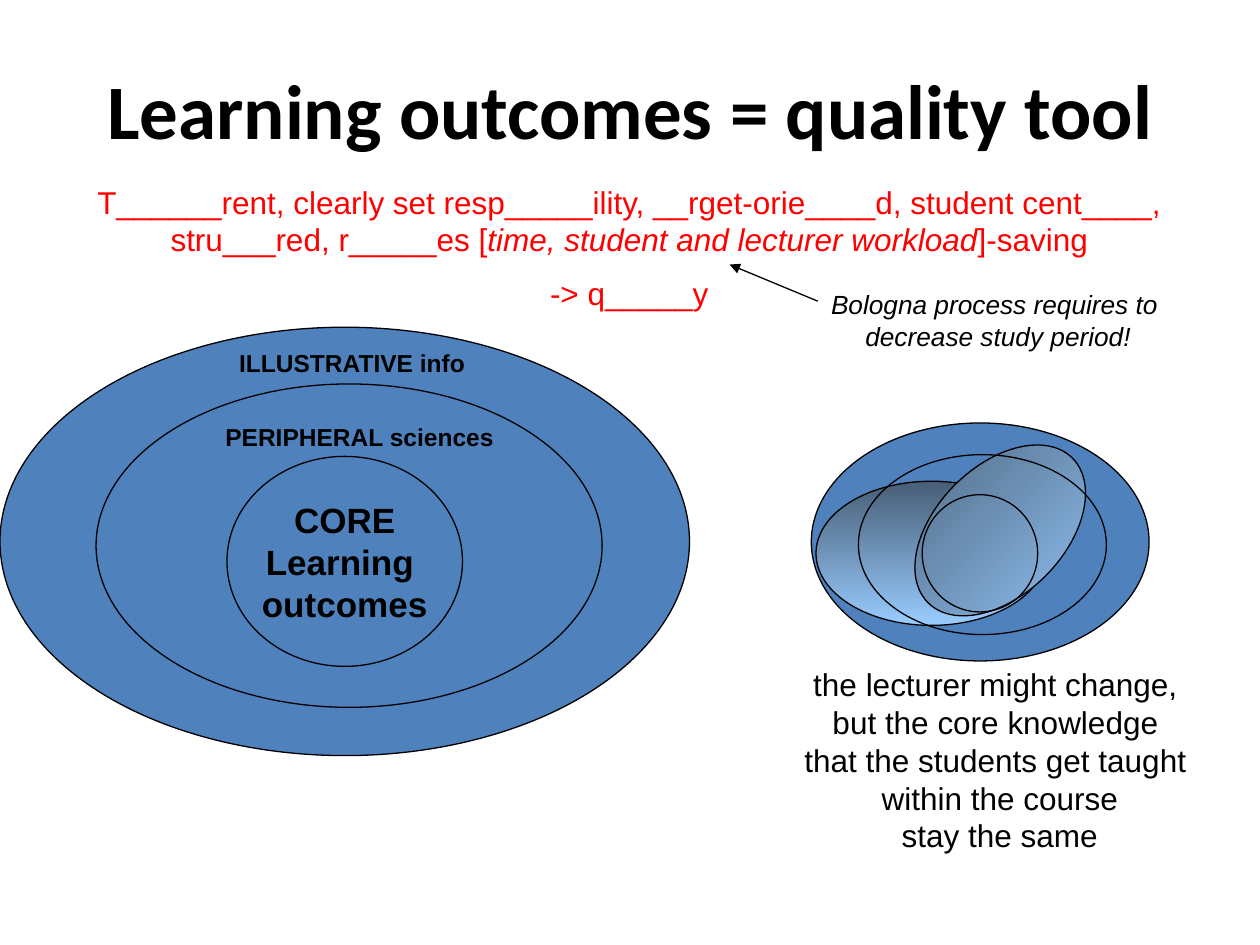
import pptx
import pptx.util
import pptx.dml.color
import pptx.enum.shapes
import pptx.enum.text
import pptx.oxml.ns
from lxml import etree

Pt = pptx.util.Pt
Rgb = pptx.dml.color.RGBColor.from_string
Align = pptx.enum.text.PP_ALIGN
Anchor = pptx.enum.text.MSO_ANCHOR
Kind = pptx.enum.shapes
qn = pptx.oxml.ns.qn

hues = {"ink": "000000", "red": "FF0000", "blue": "4F81BD",
        "dusk": "475E76", "sky": "99CCFF"}


def write(shape, lines, form, hue="ink", align=Align.CENTER, wrap=True, gap=0):
    frame = shape.text_frame
    frame.word_wrap = wrap
    for row, line in enumerate(lines):
        para = frame.paragraphs[0] if row == 0 else frame.add_paragraph()
        para.alignment = align
        if row and gap:
            para.space_before = Pt(gap)
        for part, text in enumerate(line.split("|")):
            run = para.add_run()
            run.text = text
            for key, value in form.items():
                setattr(run.font, key, value)
            if part % 2:
                run.font.italic = True
            run.font.color.rgb = Rgb(hues[hue])


def oval(group, place, fill=None, turn=0):
    shape = group.shapes.add_shape(Kind.MSO_SHAPE.OVAL, *map(Pt, place))
    shape.shadow.inherit = False
    shape.rotation = turn
    shape.line.color.rgb = Rgb(hues["ink"])
    shape.line.width = Pt(0.75)
    if fill == "fade":
        shape.fill.gradient()
        shape.fill.gradient_angle = 270
        for stop, hue, spot in zip(shape.fill.gradient_stops, ("dusk", "sky"), (0, 1)):
            stop.color.rgb = Rgb(hues[hue])
            stop.position = spot
    elif fill:
        shape.fill.solid()
        shape.fill.fore_color.rgb = Rgb(hues[fill])
    else:
        shape.fill.background()
    return shape


deck = pptx.Presentation()
deck.slide_width, deck.slide_height = Pt(720), Pt(540)
slide = deck.slides.add_slide(deck.slide_layouts[5])

title = slide.shapes.title
place = {"left": 36.7, "top": 20.2, "width": 647.3, "height": 84.2}
for key, value in place.items():
    setattr(title, key, Pt(value))
title.text_frame.vertical_anchor = Anchor.MIDDLE
write(title, ["Learning outcomes = quality tool"],
      {"name": "Calibri", "size": Pt(44), "bold": True})

lead = slide.shapes.add_textbox(Pt(19.4), Pt(100.8), Pt(680.4), Pt(83.5))
write(lead, ["T______rent, clearly set resp_____ility, __rget-orie____d, student cent____, "
             "stru___red, r_____es [|time, student and lecturer workload|]-saving",
             "-> q_____y"],
      {"name": "Arial", "size": Pt(18)}, "red", gap=9)

rings = slide.shapes.add_group_shape()
oval(rings, (0, 187, 394, 244.8), "blue")
oval(rings, (54.9, 219.4, 289.2, 184.8), "blue")
core = oval(rings, (129.7, 260.8, 134.6, 120), "blue")
core.text_frame.vertical_anchor = Anchor.MIDDLE
write(core, ["CORE", "Learning ", "outcomes"],
      {"name": "Arial", "size": Pt(20), "bold": True}, wrap=False)
for text, place in (("PERIPHERAL sciences", (121.7, 237.6, 182.9, 24)),
                    ("ILLUSTRATIVE info", (129.6, 195.4, 220.3, 24))):
    label = rings.shapes.add_textbox(*map(Pt, place))
    write(label, [text], {"name": "Arial", "size": Pt(14), "bold": True},
          align=Align.LEFT)

blend = slide.shapes.add_group_shape()
for place, fill, turn in (((463.6, 241.7, 193, 136), "blue", 0),
                          ((466.3, 275, 131.8, 82.4), "fade", 0),
                          ((513.2, 266.4, 116.8, 73.4), "fade", 314.9),
                          ((527, 282.7, 66, 67), None, 0),
                          ((490.5, 259.8, 141.7, 102.8), None, 0)):
    oval(blend, place, fill, turn)

moral = slide.shapes.add_textbox(Pt(451.4), Pt(376.6), Pt(239.8), Pt(116.6))
write(moral, ["the lecturer might change, ", "but the core knowledge ",
              "that the students get taught ", "within the course", "stay the same"],
      {"name": "Arial", "size": Pt(18)}, wrap=False)

note = slide.shapes.add_textbox(Pt(466.6), Pt(161.3), Pt(207.4), Pt(43.9))
write(note, ["Bologna process requires to ", "decrease study period!"],
      {"name": "Arial", "size": Pt(15), "italic": True}, wrap=False)

arrow = slide.shapes.add_connector(Kind.MSO_CONNECTOR.STRAIGHT,
                                   Pt(467.3), Pt(172.1), Pt(416.9), Pt(151.2))
arrow.line.color.rgb = Rgb(hues["ink"])
arrow.line.width = Pt(0.75)
etree.SubElement(arrow.line._get_or_add_ln(), qn("a:tailEnd"), type="triangle")
etree.SubElement(arrow._element.spPr, qn("a:effectLst"))

deck.save("out.pptx")
